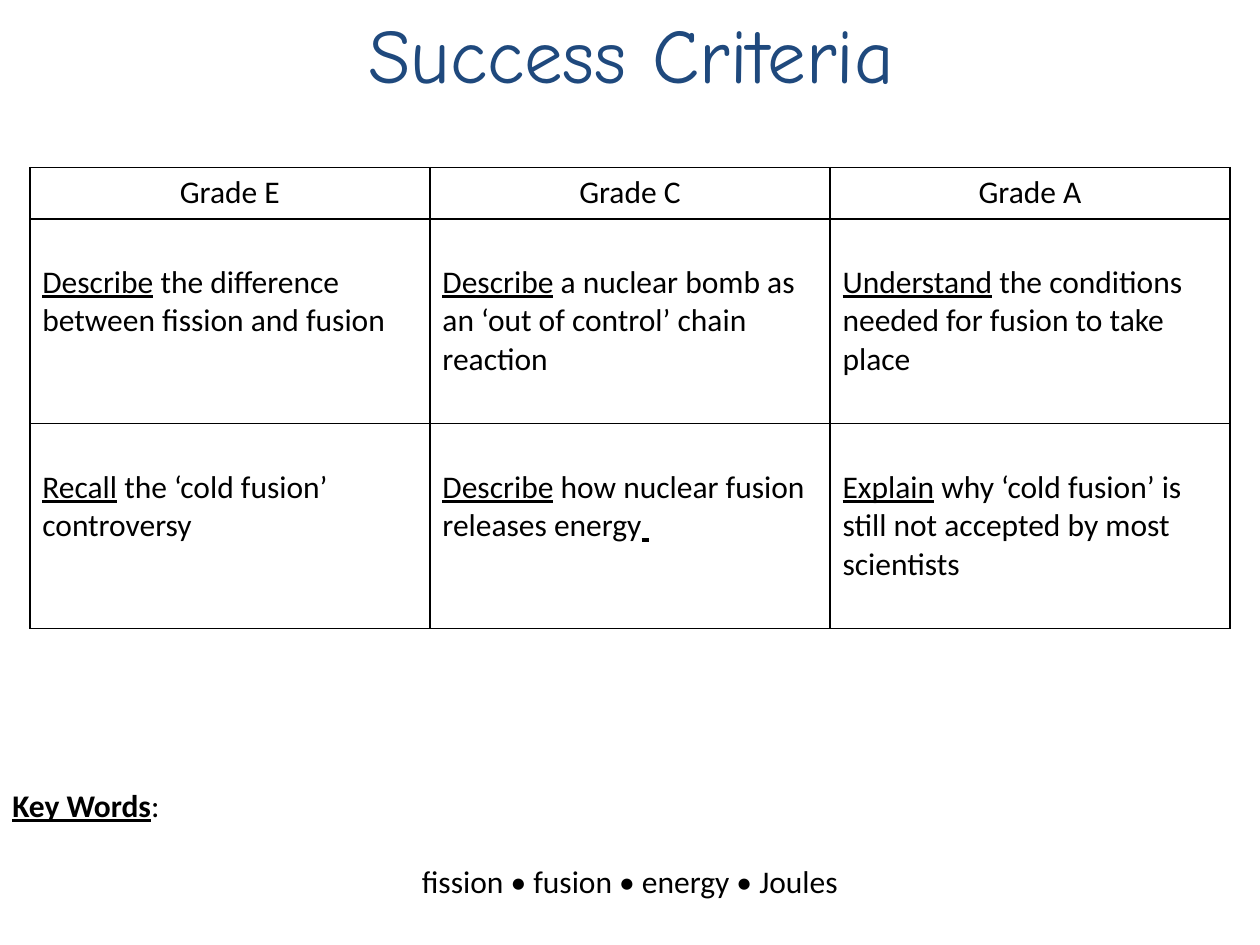
from dataclasses import dataclass

from lxml import etree
from pptx import Presentation
from pptx import util as u
from pptx.dml.color import RGBColor
from pptx.enum import text
from pptx.oxml.ns import qn


@dataclass(frozen=True)
class Theme:
    """Colours, fonts and sizes of the slide."""
    title_color: str = "1F497D"
    ink: str = "000000"
    title_font: str = "Comic Neue"
    body_font: str = "Calibri"
    title_size: int = 44
    body_size: int = 18
    line_gap: int = 22
    border: int = 1


THEME = Theme()
BODY = {"name": THEME.body_font, "size": u.Pt(THEME.body_size)}
TITLE = {"name": THEME.title_font, "size": u.Pt(THEME.title_size)}
CENTER = text.PP_ALIGN.CENTER

GRADES = ["Grade E", "Grade C", "Grade A"]
CRITERIA = [
    [("Describe", " the difference between fission and fusion"),
     ("Describe", " a nuclear bomb as an ‘out of control’ chain reaction"),
     ("Understand", " the conditions needed for fusion to take place")],
    [("Recall", " the ‘cold fusion’ controversy"),
     ("Describe", " how nuclear fusion releases energy", " "),
     ("Explain", " why ‘cold fusion’ is still not accepted by most scientists")],
]


def add_run(p, words, base=BODY, color=THEME.ink, **extra):
    """Append a formatted run to a paragraph."""
    r = p.add_run()
    r.text = words
    for name, value in {**base, **extra}.items():
        setattr(r.font, name, value)
    r.font.color.rgb = RGBColor.from_string(color)


def add_box(slide, box):
    """Add a wrapping text box and return its text frame."""
    tf = slide.shapes.add_textbox(*map(u.Cm, box)).text_frame
    tf.word_wrap = True
    return tf


def style_cell(cell):
    """Give a cell thin borders on all sides and no fill."""
    tcPr = cell._tc.get_or_add_tcPr()
    for side in ("lnL", "lnR", "lnT", "lnB"):
        ln = etree.SubElement(tcPr, qn(f"a:{side}"), w=str(u.Pt(THEME.border)))
        fill = etree.SubElement(ln, qn("a:solidFill"))
        etree.SubElement(fill, qn("a:srgbClr"), val=THEME.ink)
    cell.fill.background()


def add_title(slide, box):
    """Place the slide title."""
    p = add_box(slide, box).paragraphs[0]
    p.alignment = CENTER
    add_run(p, "Success Criteria", TITLE, THEME.title_color)


def add_criteria(slide, box, header_height=1.03, pad=0.9):
    """Place the table of criteria, one column for each grade."""
    left, top, width, height = box
    rows, cols = len(CRITERIA) + 1, len(GRADES)
    table = slide.shapes.add_table(rows, cols, *map(u.Cm, box)).table
    table.first_row = table.horz_banding = False
    for column in table.columns:
        column.width = u.Cm(width / cols)
    for i, row in enumerate(table.rows):
        row.height = u.Cm((height - header_height) / len(CRITERIA) if i else header_height)
    for c, grade in enumerate(GRADES):
        cell = table.cell(0, c)
        style_cell(cell)
        p = cell.text_frame.paragraphs[0]
        p.alignment = CENTER
        add_run(p, grade)
    for r, criteria in enumerate(CRITERIA, 1):
        for c, parts in enumerate(criteria):
            cell = table.cell(r, c)
            style_cell(cell)
            cell.margin_top = u.Cm(pad)
            p = cell.text_frame.paragraphs[0]
            for i, words in enumerate(parts):
                add_run(p, words, underline=i % 2 == 0)


def add_key_words(slide, box):
    """Place the key words heading with the centred list below."""
    tf = add_box(slide, box)
    tf.auto_size = text.MSO_AUTO_SIZE.SHAPE_TO_FIT_TEXT
    p = tf.paragraphs[0]
    add_run(p, "Key Words", bold=True, underline=True)
    add_run(p, ":")
    p = tf.add_paragraph()
    p.alignment = CENTER
    p.space_before = u.Pt(THEME.line_gap)
    add_run(p, "fission • fusion • energy • Joules")


def main():
    """Build and save the slide."""
    prs = Presentation()
    prs.slide_width, prs.slide_height = u.Cm(25.4), u.Cm(19.05)
    slide = prs.slides.add_slide(prs.slide_layouts[6])
    add_title(slide, (1.3, 0, 22.86, 3.18))
    add_criteria(slide, (0.6, 3.38, 24.2, 9.29))
    add_key_words(slide, (0, 15.72, 25.4, 2.57))
    prs.save("out.pptx")


if __name__ == "__main__":
    main()
